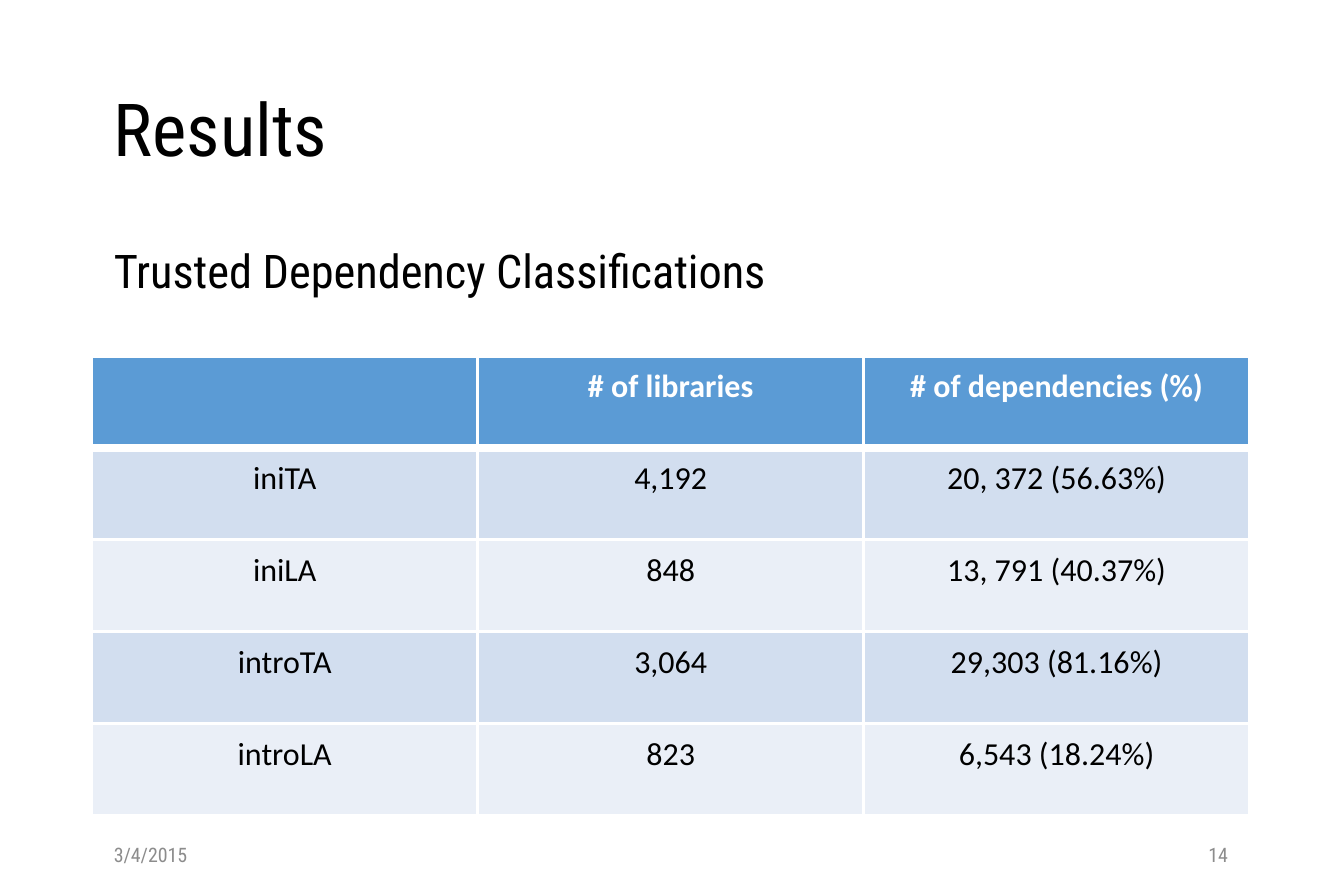
from dataclasses import dataclass

from lxml import etree
from pptx import Presentation
from pptx.dml.color import RGBColor
from pptx.enum.text import MSO_ANCHOR, PP_ALIGN
from pptx.oxml.ns import qn
from pptx.slide import Slide
from pptx.table import _Cell
from pptx.util import Inches, Pt

TOP, MIDDLE = MSO_ANCHOR.TOP, MSO_ANCHOR.MIDDLE
LEFT, CENTER, RIGHT = PP_ALIGN.LEFT, PP_ALIGN.CENTER, PP_ALIGN.RIGHT

BLACK = RGBColor(0x00, 0x00, 0x00)
WHITE = RGBColor(0xFF, 0xFF, 0xFF)
GRAY = RGBColor(0x8C, 0x8C, 0x8C)
HEADER_BLUE = RGBColor(0x5B, 0x9B, 0xD5)
BANDS = (RGBColor(0xD2, 0xDE, 0xEF), RGBColor(0xEA, 0xEF, 0xF7))

HEADING_FONT, TABLE_FONT = "Roboto Condensed", "Calibri"

# Layout in inches
SLIDE_W, SLIDE_H = 6, 4
MARGIN, CONTENT_W = 0.41, 5.17
FOOTER_TOP, FOOTER_W, FOOTER_H = 3.71, 1.35, 0.21
TABLE_TOP, ROW_H = 1.59, 0.41
RULE, HEADER_RULE = 1, 3  # border widths in points

RESULTS = [
    ("", "# of libraries", "# of dependencies (%)"),
    ("iniTA", "4,192", "20, 372 (56.63%)"),
    ("iniLA", "848", "13, 791 (40.37%)"),
    ("introTA", "3,064", "29,303 (81.16%)"),
    ("introLA", "823", "6,543 (18.24%)"),
]


@dataclass
class Label:
    text: str
    left: float
    top: float
    width: float
    height: float
    size: float
    color: RGBColor = BLACK
    anchor: MSO_ANCHOR = MIDDLE
    align: PP_ALIGN = LEFT
    line_spacing: float = 1.0
    space_before: float = 0


LABELS = [
    Label("Results", MARGIN, 0.21, CONTENT_W, 0.77, 23.5, line_spacing=0.9),
    Label("3/4/2015", MARGIN, FOOTER_TOP, FOOTER_W, FOOTER_H, 6.4, GRAY),
    Label("14", MARGIN + CONTENT_W - FOOTER_W, FOOTER_TOP, FOOTER_W, FOOTER_H,
          6.4, GRAY, align=RIGHT),
    Label("Trusted Dependency Classifications", MARGIN, 1.06, CONTENT_W, 2.54,
          14.9, anchor=TOP, line_spacing=0.9, space_before=5.3),
]


def add_label(s: Slide, label: Label) -> None:
    sp = s.shapes.add_textbox(Inches(label.left), Inches(label.top),
                              Inches(label.width), Inches(label.height))
    tf = sp.text_frame
    tf.word_wrap = True
    tf.vertical_anchor = label.anchor
    p = tf.paragraphs[0]
    p.text = label.text
    p.alignment = label.align
    p.line_spacing = label.line_spacing
    p.space_before = Pt(label.space_before)
    p.font.name = HEADING_FONT
    p.font.size = Pt(label.size)
    p.font.color.rgb = label.color


def add_borders(cell: _Cell, top: float, bottom: float) -> None:
    tc_pr = cell._tc.get_or_add_tcPr()
    for side, width in (("L", RULE), ("R", RULE), ("T", top), ("B", bottom)):
        line = etree.SubElement(tc_pr, qn(f"a:ln{side}"), w=str(Pt(width)))
        fill = etree.SubElement(line, qn("a:solidFill"))
        etree.SubElement(fill, qn("a:srgbClr"), val=str(WHITE))


def style_cell(cell: _Cell, text: str, row: int) -> None:
    header = row == 0
    add_borders(cell, top=HEADER_RULE if row == 1 else RULE,
                bottom=HEADER_RULE if header else RULE)
    cell.fill.solid()
    cell.fill.fore_color.rgb = HEADER_BLUE if header else BANDS[(row - 1) % 2]
    p = cell.text_frame.paragraphs[0]
    p.text = text
    p.alignment = CENTER
    p.font.name = TABLE_FONT
    p.font.size = Pt(10.3)
    p.font.bold = header
    p.font.color.rgb = WHITE if header else BLACK


def add_results_table(s: Slide) -> None:
    n_rows, n_cols = len(RESULTS), len(RESULTS[0])
    table = s.shapes.add_table(n_rows, n_cols, Inches(MARGIN), Inches(TABLE_TOP),
                               Inches(CONTENT_W), Inches(ROW_H * n_rows)).table
    for row, texts in enumerate(RESULTS):
        for col, text in enumerate(texts):
            style_cell(table.cell(row, col), text, row)


def main() -> None:
    prs = Presentation()
    prs.slide_width, prs.slide_height = Inches(SLIDE_W), Inches(SLIDE_H)
    s = prs.slides.add_slide(prs.slide_layouts[6])

    # Results table, then title, subtitle and footer
    add_results_table(s)
    for label in LABELS:
        add_label(s, label)

    prs.save("out.pptx")


if __name__ == "__main__":
    main()
